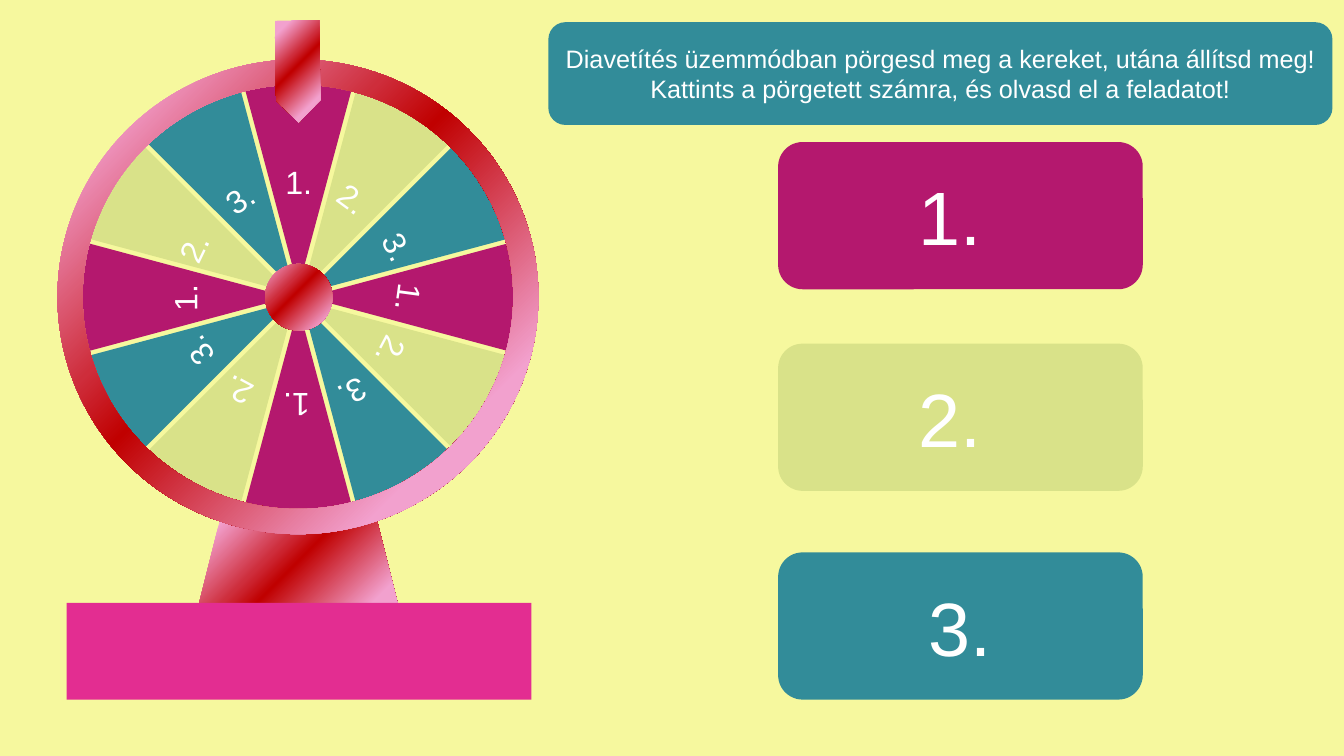
from math import cos, radians, sin

from pptx import Presentation
from pptx.dml.color import RGBColor
from pptx.enum.shapes import MSO_SHAPE as SHAPE
from pptx.enum.text import MSO_ANCHOR as ANCHOR, PP_ALIGN as ALIGN
from pptx.oxml import parse_xml
from pptx.util import Cm, Pt

COLORS = {
    "background": "F6F89E",
    "magenta": "B4186E",
    "lime": "D9E289",
    "teal": "328C99",
    "pink": "E32D91",
    "white": "FFFFFF",
}
CYCLE = ["magenta", "lime", "teal"]
METAL = [(11, "F2A1CE"), (36, "CE2D3B"), (46, "C00000"), (81, "F2A1CE")]
A_NS = "http://schemas.openxmlformats.org/drawingml/2006/main"

HUB_X, HUB_Y = 7.52, 7.49
WEDGE_RADIUS, WEDGE_OFFSET, WEDGE_HALF_ANGLE = 5.46, 0.23, 14.4

# centre x, centre y, width, height, rotation; numbered 1-2-3 clockwise
LABELS = [
    (7.70, 4.78, 1.02, 1.37, 0),
    (8.86, 5.22, 0.89, 1.37, 36.2),
    (9.93, 6.45, 1.02, 1.37, 63.5),
    (10.16, 7.58, 0.89, 1.27, 97.7),
    (9.65, 8.85, 0.89, 1.37, 118),
    (8.71, 9.79, 0.89, 1.37, 154.2),
    (7.30, 10.21, 1.02, 1.04, 180),
    (5.99, 9.64, 0.89, 1.37, 208.2),
    (5.05, 8.61, 1.02, 1.37, 235.4),
    (4.85, 7.37, 0.97, 1.37, 270),
    (5.03, 6.06, 1.14, 1.12, 295.7),
    (6.26, 5.08, 0.97, 1.35, 326.2),
]


def rgb(name):
    return RGBColor.from_string(COLORS[name])


def polar(angle, radius):
    """Point around the hub, with the angle clockwise from the top."""
    a = radians(angle)
    return Cm(HUB_X + radius * sin(a)), Cm(HUB_Y - radius * cos(a))


class WheelSlide:
    font = "Arial"

    def __init__(self, prs):
        self.s = prs.slides.add_slide(prs.slide_layouts[6])
        fill = self.s.background.fill
        fill.solid()
        fill.fore_color.rgb = rgb("background")

    def finish(self, sp, color):
        """Remove shadow and outline, and fill if a colour is given."""
        sp.shadow.inherit = False
        sp.line.fill.background()
        if color:
            sp.fill.solid()
            sp.fill.fore_color.rgb = rgb(color)
        return sp

    def set_text(self, tf, lines, size, align):
        for i, line in enumerate(lines):
            p = tf.add_paragraph() if i else tf.paragraphs[0]
            p.text = line
            p.alignment = align
            p.font.name = self.font
            p.font.size = Pt(size)
            p.font.color.rgb = rgb("white")

    def shape(self, kind, box, color=None):
        sp = self.s.shapes.add_shape(kind, *map(Cm, box))
        return self.finish(sp, color)

    def metal(self, kind, box, rotation=0):
        """Shape with the pink-red sheen, always running to the lower right."""
        sp = self.shape(kind, box)
        sp.rotation = rotation
        stops = "".join(
            f'<a:gs pos="{pos * 1000}"><a:srgbClr val="{color}"/></a:gs>'
            for pos, color in METAL
        )
        angle = (45 - rotation) % 360 * 60000
        grad = parse_xml(
            f'<a:gradFill xmlns:a="{A_NS}" rotWithShape="1"><a:gsLst>{stops}'
            f'</a:gsLst><a:lin ang="{angle}" scaled="0"/></a:gradFill>'
        )
        sp.element.spPr.find(f"{{{A_NS}}}prstGeom").addnext(grad)
        return sp

    def wedge(self, angle, color):
        steps = 12
        rim = [
            polar(angle + WEDGE_HALF_ANGLE * (2 * i / steps - 1), WEDGE_RADIUS)
            for i in range(steps + 1)
        ]
        builder = self.s.shapes.build_freeform(*polar(angle, WEDGE_OFFSET))
        builder.add_line_segments(rim, close=True)
        self.finish(builder.convert_to_shape(), color)

    def label(self, text, cx, cy, w, h, rotation):
        sp = self.s.shapes.add_textbox(
            Cm(cx - w / 2), Cm(cy - h / 2), Cm(w), Cm(h))
        sp.rotation = rotation
        tf = sp.text_frame
        tf.word_wrap = True
        tf.margin_left = tf.margin_right = tf.margin_top = tf.margin_bottom = 0
        self.set_text(tf, [text], 23, ALIGN.LEFT)

    def card(self, box, color, lines, size):
        tf = self.shape(SHAPE.ROUNDED_RECTANGLE, box, color).text_frame
        tf.word_wrap = True
        tf.vertical_anchor = ANCHOR.MIDDLE
        self.set_text(tf, lines, size, ALIGN.CENTER)


def main():
    prs = Presentation()
    prs.slide_width, prs.slide_height = Cm(33.87), Cm(19.05)
    slide = WheelSlide(prs)

    slide.metal(SHAPE.TRAPEZOID, (4.83, 12.98, 5.38, 2.98))
    slide.shape(SHAPE.RECTANGLE, (1.68, 15.19, 11.71, 2.44), "pink")

    for i in range(len(LABELS)):
        slide.wedge(30 * i, CYCLE[i % 3])
    for i, place in enumerate(LABELS):
        slide.label(f"{i % 3 + 1}.", *place)

    ring = slide.metal(SHAPE.DONUT, (1.45, 1.5, 12.12, 11.96))
    ring.adjustments[0] = 0.053
    slide.metal(SHAPE.PENTAGON, (6.22, 1.24, 2.57, 1.12), rotation=89)
    slide.metal(SHAPE.FLOWCHART_CONNECTOR, (6.68, 6.65, 1.7, 1.68), rotation=15)

    cards = zip((3.58, 8.66, 13.92), CYCLE, ("1. ", "2. ", "3."))
    for top, color, text in cards:
        slide.card((19.61, top, 9.19, 3.71), color, [text], 54)
    slide.card((13.82, 0.56, 19.76, 2.59), "teal", [
        "Diavetítés üzemmódban pörgesd meg a kereket, utána állítsd meg!",
        "Kattints a pörgetett számra, és olvasd el a feladatot!",
    ], 18)

    prs.save("out.pptx")


if __name__ == "__main__":
    main()
